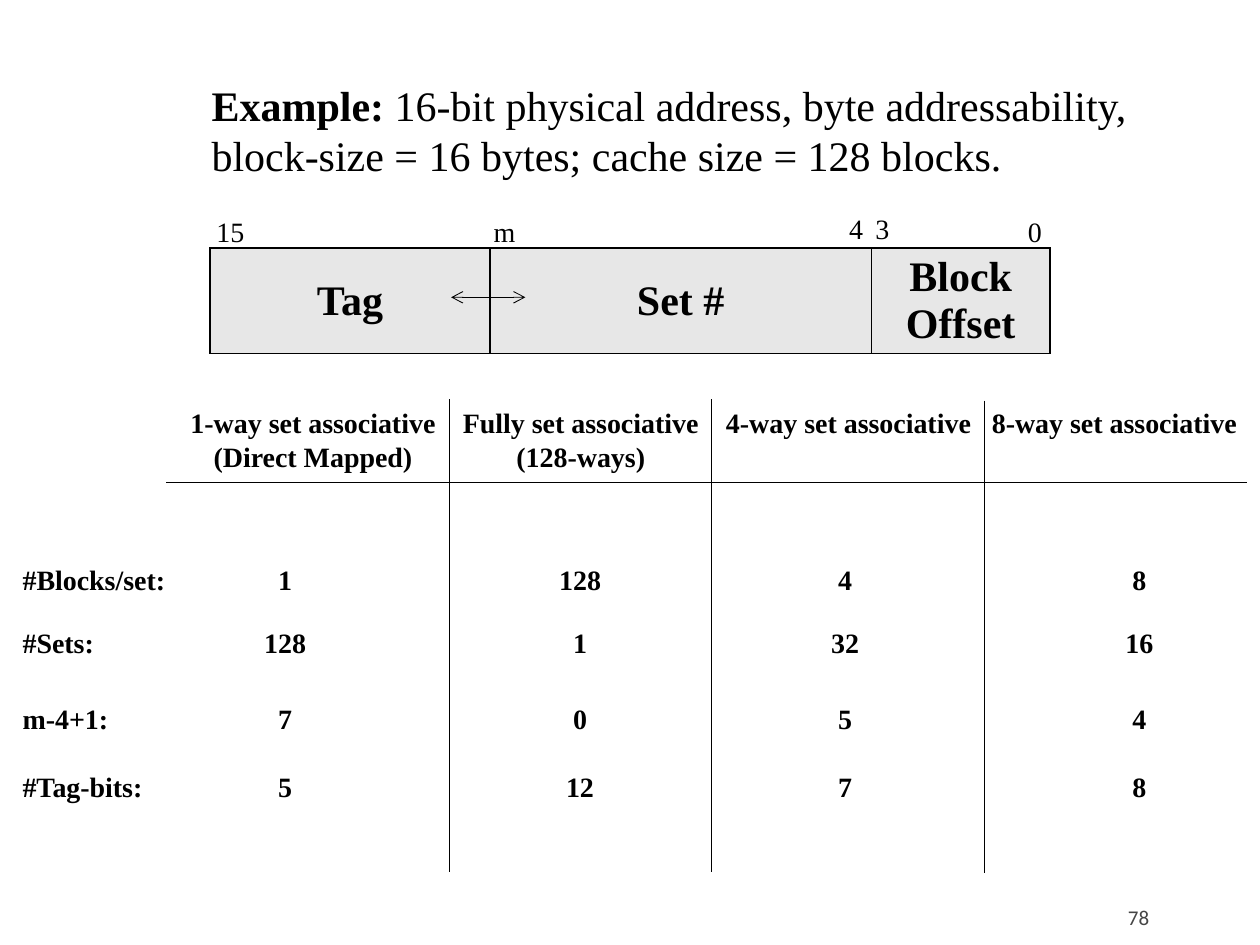
"""Build a slide that compares cache layouts for a 16-bit address."""
import dataclasses

import pptx
import pptx.dml.color
import pptx.enum.shapes
import pptx.enum.text
import pptx.oxml
import pptx.oxml.ns
import pptx.util

Pt = pptx.util.Pt
ALIGN = pptx.enum.text.PP_ALIGN
ANCHOR = pptx.enum.text.MSO_ANCHOR
FIT = pptx.enum.text.MSO_AUTO_SIZE
NS = pptx.oxml.ns.nsdecls("a")


@dataclasses.dataclass(frozen=True)
class Theme:
    ink: str = "000000"
    gray: str = "454545"
    cell: str = "E7E7E7"
    serif: str = "Times New Roman"
    sans: str = "Calibri"
    big: int = 24
    mid: int = 16
    small: int = 12


theme = Theme()
deck = pptx.Presentation()
deck.slide_width, deck.slide_height = Pt(720), Pt(540)
slide = deck.slides.add_slide(deck.slide_layouts[6])


def write(text, box=None, frame=None, lead="", size=theme.mid, bold=False,
          font=theme.serif, color=theme.ink, align=ALIGN.LEFT, gap=0):
    if frame is None:
        frame = slide.shapes.add_textbox(*map(Pt, box)).text_frame
        frame.word_wrap = False
        frame.auto_size = FIT.SHAPE_TO_FIT_TEXT
    for row, words in enumerate(text.split("\n")):
        para = frame.add_paragraph() if row else frame.paragraphs[0]
        para.alignment = align
        para.space_before = Pt(gap)
        parts = [(lead, True)] if lead and not row else []
        for part, heavy in parts + [(words, bold)]:
            run = para.add_run()
            run.text = part
            run.font.name, run.font.size, run.font.bold = font, Pt(size), heavy
            run.font.color.rgb = pptx.dml.color.RGBColor.from_string(color)
    return frame


def rule(x1, y1, x2, y2, arrow=False):
    kind = pptx.enum.shapes.MSO_CONNECTOR.STRAIGHT
    line = slide.shapes.add_connector(kind, *map(Pt, (x1, y1, x2, y2)))
    line.line.width = Pt(0.5)
    line.line.color.rgb = pptx.dml.color.RGBColor.from_string(theme.ink)
    if arrow:
        for end in ("headEnd", "tailEnd"):
            line.get_or_add_ln().append(
                pptx.oxml.parse_xml(f'<a:{end} {NS} type="arrow"/>'))
    line.element.spPr.append(pptx.oxml.parse_xml(f"<a:effectLst {NS}/>"))


page = write("78", (606.2, 509.8, 57.6, 21.6), size=theme.small,
             font=theme.sans, color=theme.gray, align=ALIGN.RIGHT)
page.auto_size = FIT.NONE
page.word_wrap = True
page.vertical_anchor = ANCHOR.BOTTOM
page.margin_bottom = 0

fields = [("Tag", 160), ("Set #", 218), ("Block Offset", 102)]
grid = slide.shapes.add_table(1, 3, Pt(120), Pt(141.8), Pt(480), Pt(50.4)).table
for col, (name, width) in enumerate(fields):
    grid.columns[col].width = Pt(width)
    cell = grid.cell(0, col)
    cell.vertical_anchor = ANCHOR.MIDDLE
    cell.fill.solid()
    cell.fill.fore_color.rgb = pptx.dml.color.RGBColor.from_string(theme.cell)
    write(name, frame=cell.text_frame, size=theme.big, bold=True,
          align=ALIGN.CENTER)
    props = cell._tc.get_or_add_tcPr()
    for spot, side in enumerate("LRTB"):
        props.insert(spot, pptx.oxml.parse_xml(
            f'<a:ln{side} {NS} w="12700"><a:solidFill>'
            f'<a:srgbClr val="{theme.ink}"/></a:solidFill></a:ln{side}>'))

rule(257.8, 169.9, 300.2, 169.9, arrow=True)
bits = [("0", 580.3, 118.8), ("3", 493.2, 117.4), ("4", 478.1, 117.4),
        ("15", 116.6, 118.8), ("m", 275, 118.8)]
for bit, left, top in bits:
    write(bit, (left, top, 14.4 + 8 * len(bit), 26.6))

write("16-bit physical address, byte addressability,\n"
      "block-size = 16 bytes; cache size = 128 blocks.",
      (113.8, 41.8, 542.9, 65.5), lead="Example: ", size=theme.big)

heads = [("1-way set associative\n(Direct Mapped)", 100.8, 156.2, 46.1),
         ("Fully set associative\n(128-ways)", 256.3, 151.2, 46.1),
         ("4-way set associative", 406.8, 156.2, 26.6),
         ("8-way set associative", 558.7, 156.2, 26.6)]
for head, left, width, high in heads:
    write(head, (left, 228.2, width, high), bold=True, align=ALIGN.CENTER)

for x, y in [(257, 228.2), (406.8, 228.2), (562.3, 229)]:
    rule(x, y, x, y + 270)
rule(95, 275.8, 712.8, 275.8)

mids = [163.1, 331.6, 483.1, 651.2]
rows = [("#Blocks/set:", 318.2, 97.2, ["1", "128", "4", "8"]),
        ("#Sets:", 354.2, 56.2, ["128", "1", "32", "16"]),
        ("m-4+1:", 397.4, 64.1, ["7", "0", "5", "4"]),
        ("#Tag-bits:", 436.3, 84.2, ["5", "12", "7", "8"])]
for label, top, width, values in rows:
    write(label, (5.8, top, width, 26.6), bold=True)
    for mid, value in zip(mids, values):
        span = 14.4 + 8 * len(value)
        write(value, (mid - span / 2, top, span, 26.6), bold=True)

deck.save("out.pptx")
